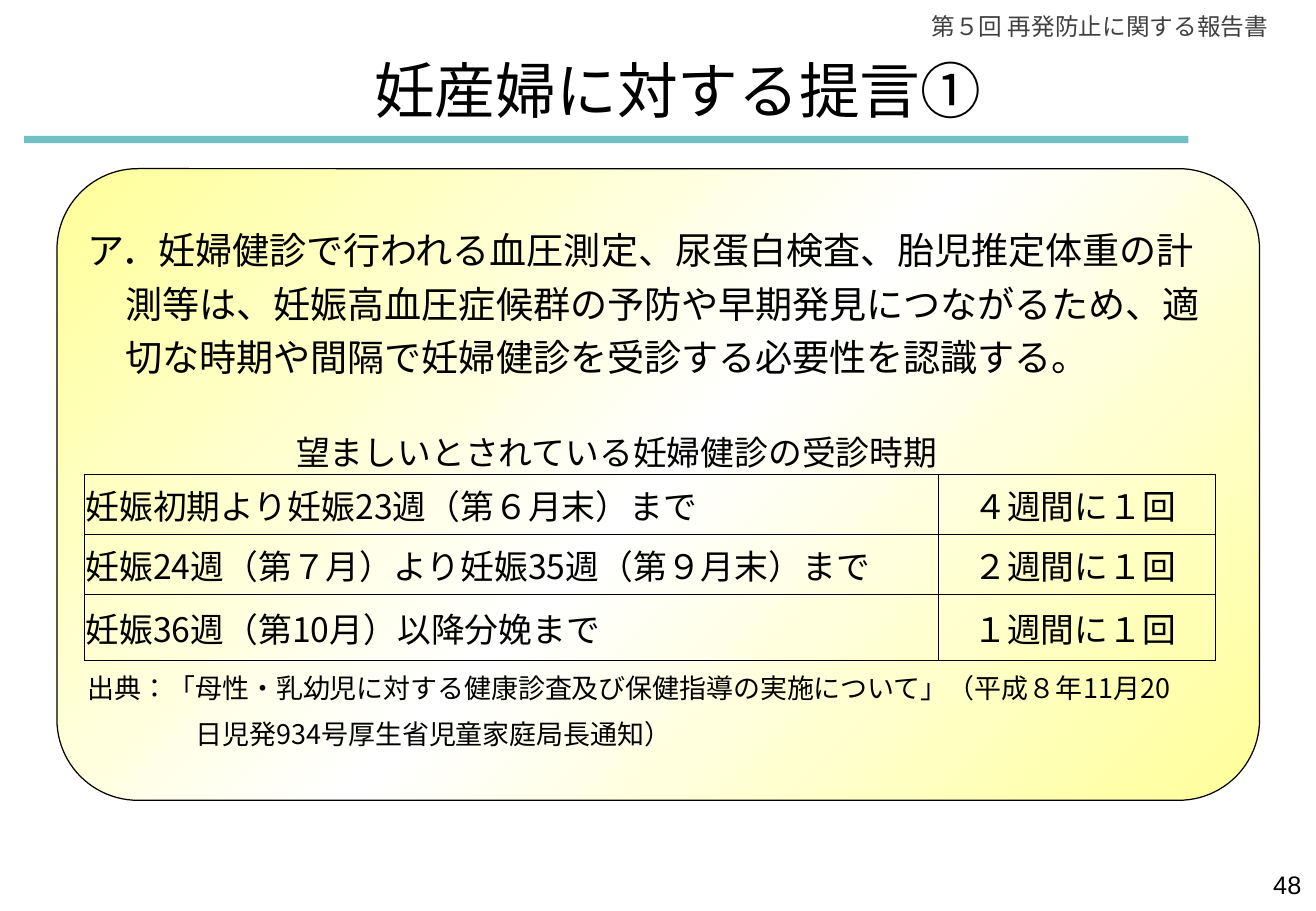
from copy import deepcopy
from dataclasses import dataclass
from pptx import Presentation
from pptx.dml.color import RGBColor
from pptx.enum import lang, shapes, text
from pptx.oxml import parse_xml
from pptx.oxml.ns import nsdecls
from pptx.util import Pt


@dataclass(frozen=True)
class Theme:
    black: RGBColor = RGBColor(0, 0, 0)
    gray: RGBColor = RGBColor(0x40, 0x40, 0x40)
    teal: RGBColor = RGBColor(0x72, 0xBF, 0xC5)
    yellow: RGBColor = RGBColor(0xFF, 0xFF, 0x99)
    white: RGBColor = RGBColor(0xFF, 0xFF, 0xFF)
    latin: str = "Arial"
    japanese: str = "Noto Sans CJK JP"
    title: int = 36
    body: int = 22
    table: int = 20
    source: int = 16
    number: int = 15
    header: int = 14


theme = Theme()


def add_span(para, words, size, font=theme.japanese, color=theme.black):
    span = para.add_run()
    span.text = words
    span.font.size = Pt(size)
    span.font.name = font
    span.font.color.rgb = color
    span.font.language_id = lang.MSO_LANGUAGE_ID.JAPANESE
    span.font._element.find("{*}latin").addnext(
        parse_xml(f'<a:ea {nsdecls("a")} typeface="{theme.japanese}"/>'))


def set_insets(frame, left, top, right, bottom):
    frame.margin_left, frame.margin_top = Pt(left), Pt(top)
    frame.margin_right, frame.margin_bottom = Pt(right), Pt(bottom)


deck = Presentation()
deck.slide_width, deck.slide_height = Pt(780), Pt(540)
page = deck.slides.add_slide(deck.slide_layouts[6])

rule = page.shapes.add_shape(shapes.MSO_SHAPE.RECTANGLE, Pt(14.4), Pt(80.6), Pt(690), Pt(4.3))
rule.shadow.inherit = False
rule.fill.solid()
rule.fill.fore_color.rgb = theme.teal
rule.line.fill.background()

panel = page.shapes.add_shape(shapes.MSO_SHAPE.ROUNDED_RECTANGLE, Pt(33.8), Pt(100), Pt(712.8), Pt(374.4))
panel.shadow.inherit = False
panel.adjustments[0] = 0.128
panel.line.color.rgb = theme.black
panel.line.width = Pt(0.75)
panel.fill.gradient()
panel.fill.gradient_angle = 315
stop_list = panel.element.xpath(".//a:gsLst")[0]
stop_list.append(deepcopy(stop_list[0]))
for stop, position, color in zip(panel.fill.gradient_stops, (0, 0.5, 1),
                                 (theme.yellow, theme.white, theme.yellow)):
    stop.position = position
    stop.color.rgb = color

frame = panel.text_frame
frame.word_wrap = True
frame.vertical_anchor = text.MSO_ANCHOR.TOP
set_insets(frame, 4.3, 15.6, 5.5, 4.3)
panel_lines = [
    ("ア．妊婦健診で行われる血圧測定、尿蛋白検査、胎児推定体重の計測等は、妊娠高血圧症候群の予防や早期発見につながるため、適切な時期や間隔で妊婦健診を受診する必要性を認識する。",
     theme.body, 22.3, -22.3, 0),
    ("出典：「母性・乳幼児に対する健康診査及び保健指導の実施について」（平成８年11月20",
     theme.source, 22.3, -22.3, 169.9),
    ("日児発934号厚生省児童家庭局長通知）", theme.source, 64, 0, 4),
]
for index, (words, size, margin, indent, before) in enumerate(panel_lines):
    para = frame.add_paragraph() if index else frame.paragraphs[0]
    para.alignment = text.PP_ALIGN.LEFT
    para.line_spacing = 1.2
    para.space_before = Pt(before)
    properties = para._p.get_or_add_pPr()
    properties.set("marL", str(Pt(margin)))
    properties.set("indent", str(Pt(indent)))
    add_span(para, words, size)

left, center, right = text.PP_ALIGN.LEFT, text.PP_ALIGN.CENTER, text.PP_ALIGN.RIGHT
labels = [
    ("第５回 再発防止に関する報告書", (531.4, 3.6, 227.5, 24.5), theme.header, theme.latin, theme.gray, right, 1),
    ("妊産婦に対する提言①", (212.4, 27.4, 378.7, 51.1), theme.title, theme.japanese, theme.black, center, 1),
    ("48", (596.2, 511.9, 182.2, 28), theme.number, theme.latin, theme.black, right, 1),
    ("望ましいとされている妊婦健診の受診時期", (168.5, 247.7, 419.8, 36.7), theme.table, theme.japanese, theme.black, left, 1.2),
]
for words, place, size, font, color, alignment, spacing in labels:
    box = page.shapes.add_textbox(*map(Pt, place))
    box.text_frame.word_wrap = True
    box.text_frame.vertical_anchor = text.MSO_ANCHOR.MIDDLE if size == theme.title else text.MSO_ANCHOR.TOP
    para = box.text_frame.paragraphs[0]
    para.alignment = alignment
    para.line_spacing = spacing
    add_span(para, words, size, font, color)

schedule = [
    ("妊娠初期より妊娠23週（第６月末）まで", "４週間に１回"),
    ("妊娠24週（第７月）より妊娠35週（第９月末）まで", "２週間に１回"),
    ("妊娠36週（第10月）以降分娩まで", "１週間に１回"),
]
table = page.shapes.add_table(3, 2, Pt(50), Pt(281.2), Pt(670.4), Pt(110)).table
table.first_row = table.horz_banding = False
for column, width in zip(table.columns, (506.2, 164.2)):
    column.width = Pt(width)
for row, height, entries in zip(table.rows, (35.5, 35.5, 39), schedule):
    row.height = Pt(height)
    for cell, words, margin in zip(row.cells, entries, (0.7, 20.7)):
        set_insets(cell, margin, 0.7, 0.7, 0)
        cell.vertical_anchor = text.MSO_ANCHOR.MIDDLE
        add_span(cell.text_frame.paragraphs[0], words, theme.table)
        properties = cell._tc.get_or_add_tcPr()
        for side in ("lnL", "lnR", "lnT", "lnB"):
            properties.append(parse_xml(
                f'<a:{side} {nsdecls("a")} w="{Pt(0.5)}"><a:solidFill>'
                f'<a:srgbClr val="{theme.black}"/></a:solidFill></a:{side}>'))
        cell.fill.background()

deck.save("out.pptx")
